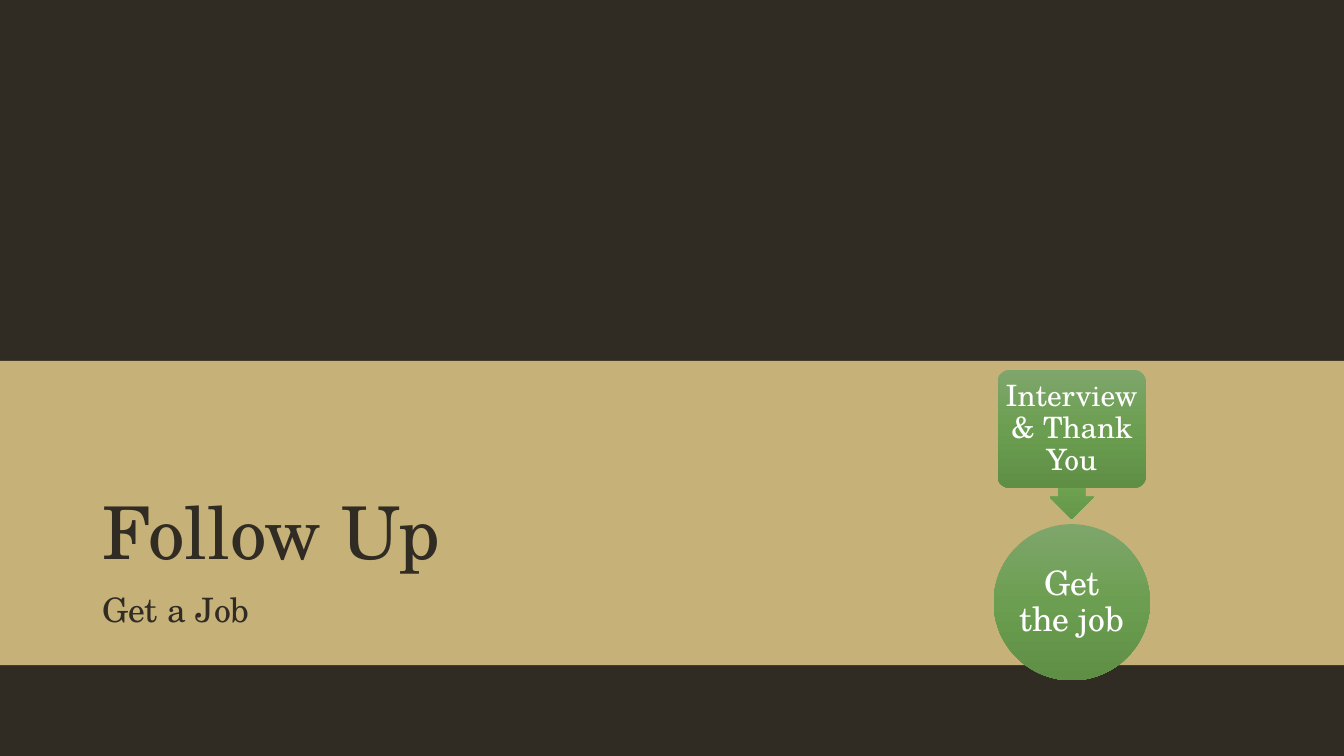
from copy import deepcopy

from pptx import Presentation
from pptx.dml.color import RGBColor
from pptx.enum.shapes import MSO_SHAPE
from pptx.enum.text import MSO_ANCHOR, PP_ALIGN
from pptx.oxml.ns import qn
from pptx.util import Inches, Pt

RECTANGLE, ROUNDED = MSO_SHAPE.RECTANGLE, MSO_SHAPE.ROUNDED_RECTANGLE
ELLIPSE, DOWN_ARROW = MSO_SHAPE.OVAL, MSO_SHAPE.DOWN_ARROW
TOP, MIDDLE, BOTTOM = MSO_ANCHOR.TOP, MSO_ANCHOR.MIDDLE, MSO_ANCHOR.BOTTOM
LEFT, CENTER = PP_ALIGN.LEFT, PP_ALIGN.CENTER

WIDTH, HEIGHT = 13.33, 7.5
FONT = "TeX Gyre Schola"
DARK, SAND, WHITE = "302C24", "C6B178", "FFFFFF"
STEP_GREENS = ["7EA66B", "6C9E51", "5F8F45"]
ARROW_GREENS = ["83AD6E", "72A655", "649748"]
TEXT_LEFT, TEXT_WIDTH = 0.92, 10.5
FLOW_CENTER = 10.63


def color(hex_code):
    return RGBColor.from_string(hex_code)


def write(box, words, size, ink, anchor, align):
    frame = box.text_frame
    frame.word_wrap = True
    frame.vertical_anchor = anchor
    frame.text = words
    para = frame.paragraphs[0]
    para.alignment = align
    para.line_spacing = 0.9
    span = para.runs[0]
    span.font.name = FONT
    span.font.size = Pt(size)
    span.font.color.rgb = color(ink)


deck = Presentation()
deck.slide_width, deck.slide_height = Inches(WIDTH), Inches(HEIGHT)
page = deck.slides.add_slide(deck.slide_layouts[6])
page.background.fill.solid()
page.background.fill.fore_color.rgb = color(DARK)

band = page.shapes.add_shape(RECTANGLE, 0, Inches(3.58), Inches(WIDTH), Inches(3.02))
band.shadow.inherit = False
band.fill.solid()
band.fill.fore_color.rgb = color(SAND)
band.line.fill.background()

# Heading and subheading
for words, top, height, size, anchor in [
    ("Follow Up", 3.75, 2.01, 52, BOTTOM),
    ("Get a Job", 5.84, 0.52, 24, TOP),
]:
    box = page.shapes.add_textbox(
        Inches(TEXT_LEFT), Inches(top), Inches(TEXT_WIDTH), Inches(height))
    write(box, words, size, DARK, anchor, LEFT)

# Flow, centred on one column; the arrow starts behind the upper step
for kind, top, width, height, adjustments, greens, words, size, inset in [
    (ELLIPSE, 5.2, 1.55, 1.55, [], STEP_GREENS, "Get the job", 24, 0.02),
    (DOWN_ARROW, 4.25, 0.44, 0.9, [0.6, 0.5], ARROW_GREENS, "", 0, 0),
    (ROUNDED, 3.67, 1.47, 1.17, [0.1], STEP_GREENS, "Interview & Thank You", 21, 0.04),
]:
    step = page.shapes.add_shape(
        kind, Inches(FLOW_CENTER - width / 2), Inches(top), Inches(width), Inches(height))
    step.shadow.inherit = False
    step.line.fill.background()
    for index, value in enumerate(adjustments):
        step.adjustments[index] = value

    step.fill.gradient()
    step.fill.gradient_angle = 270
    stop_list = step.fill._xPr.find(qn("a:gradFill")).find(qn("a:gsLst"))
    stop_list.append(deepcopy(stop_list[0]))
    for index, stop in enumerate(step.fill.gradient_stops):
        stop.position = index / 2
        stop.color.rgb = color(greens[index])

    if words:
        frame = step.text_frame
        frame.margin_left = frame.margin_right = Inches(inset)
        frame.margin_top = frame.margin_bottom = Inches(inset)
        write(step, words, size, WHITE, MIDDLE, CENTER)

deck.save("out.pptx")
